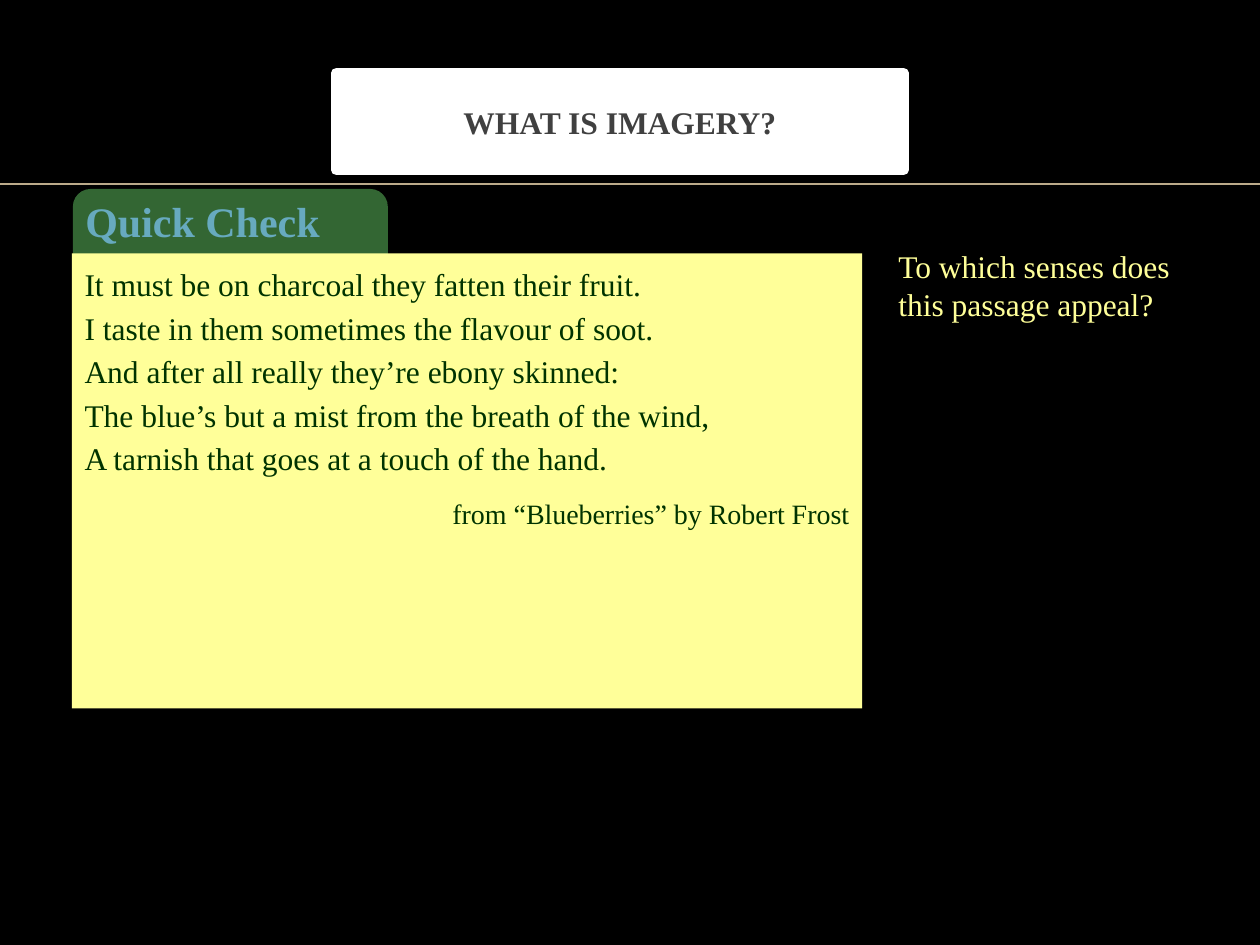
import dataclasses

import lxml.etree
import pptx
import pptx.dml.color
import pptx.enum.shapes
import pptx.enum.text
import pptx.oxml.ns
import pptx.util

Cm = pptx.util.Cm
Pt = pptx.util.Pt
ALIGN = pptx.enum.text.PP_ALIGN
SHAPE = pptx.enum.shapes.MSO_SHAPE


@dataclasses.dataclass(frozen=True)
class Theme:
    font: str = "Times New Roman"
    background: str = "000000"
    rule: str = "BBAA8A"
    tab: str = "336633"
    tab_text: str = "67AABF"
    panel: str = "FFFF99"
    panel_text: str = "003300"
    title_fill: str = "FFFFFF"
    title_text: str = "404040"
    heading: int = 24
    text: int = 18
    credit: int = 16


def rgb(value):
    return pptx.dml.color.RGBColor.from_string(value)


def add_child(parent, tag):
    lxml.etree.SubElement(parent, pptx.oxml.ns.qn(tag))


class SlideBuilder:
    def __init__(self, prs, theme):
        self.theme = theme
        self.s = prs.slides.add_slide(prs.slide_layouts[1])
        self.fill(self.s.background, theme.background)

    def fill(self, target, color):
        target.fill.solid()
        target.fill.fore_color.rgb = rgb(color)

    def paragraph(self, p, text, size, color, bold=False, space=0):
        p.text = text
        p.space_before = Pt(space)
        for r in p.runs:
            r.font.name = self.theme.font
            r.font.size = Pt(size)
            r.font.bold = bold
            r.font.color.rgb = rgb(color)

    def placeholder(self, sp, box, color):
        sp.left, sp.top, sp.width, sp.height = map(Cm, box)
        self.fill(sp, color)
        sp.text_frame.auto_size = pptx.enum.text.MSO_AUTO_SIZE.NONE
        sp._element.getparent().append(sp._element)
        return sp.text_frame

    def title(self, text, box):
        sp = self.s.shapes.title
        tf = self.placeholder(sp, box, self.theme.title_fill)
        sp.line.color.rgb = rgb(self.theme.title_fill)
        sp.line.width = Pt(6)
        tf.vertical_anchor = pptx.enum.text.MSO_ANCHOR.MIDDLE
        p = tf.paragraphs[0]
        self.paragraph(p, text, self.theme.text, self.theme.title_text, True, 4)
        p.alignment = ALIGN.CENTER

    def passage(self, lines, credit, box):
        theme = self.theme
        tf = self.placeholder(self.s.placeholders[1], box, theme.panel)
        tf.text = "\n".join([*lines, credit])
        for p in tf.paragraphs:
            self.paragraph(p, p.text, theme.text, theme.panel_text)
            p.line_spacing = 1.15
            pPr = p._p.get_or_add_pPr()
            pPr.set("marL", str(Cm(0.97)))
            pPr.set("indent", str(-Cm(0.97)))
            add_child(pPr, "a:buNone")
        self.paragraph(p, credit, theme.credit, theme.panel_text,
                       space=theme.credit / 2)
        p.alignment = ALIGN.RIGHT

    def text(self, text, box, size, color, bold=False):
        tf = self.s.shapes.add_textbox(*map(Cm, box)).text_frame
        tf.word_wrap = True
        self.paragraph(tf.paragraphs[0], text, size, color, bold, size / 2)

    def tab(self, box):
        sp = self.s.shapes.add_shape(SHAPE.ROUNDED_RECTANGLE, *map(Cm, box))
        sp.shadow.inherit = False
        self.fill(sp, self.theme.tab)
        sp.line.fill.background()

    def rule(self, y, width):
        line = self.s.shapes.add_connector(
            pptx.enum.shapes.MSO_CONNECTOR.STRAIGHT, 0, Cm(y), Cm(width), Cm(y))
        line.line.color.rgb = rgb(self.theme.rule)
        line.line.width = Pt(1)
        add_child(line._element.spPr, "a:effectLst")


def main():
    prs = pptx.Presentation()
    prs.slide_width, prs.slide_height = Cm(25.4), Cm(19.05)
    theme = Theme()
    slide = SlideBuilder(prs, theme)
    slide.rule(3.71, 25.4)
    slide.text("To which senses does this passage appeal?",
               (17.86, 4.85, 6.07, 3.63), theme.text, theme.panel)
    slide.tab((1.47, 3.81, 6.35, 2.13))
    slide.text("Quick Check", (1.47, 3.81, 6.45, 1.27),
               theme.heading, theme.tab_text, True)
    slide.passage(
        [
            "It must be on charcoal they fatten their fruit.",
            "I taste in them sometimes the flavour of soot.",
            "And after all really they’re ebony skinned:",
            "The blue’s but a mist from the breath of the wind,",
            "A tarnish that goes at a touch of the hand.",
        ],
        "from “Blueberries” by Robert Frost",
        (1.45, 5.11, 15.93, 9.17),
    )
    slide.title("WHAT IS IMAGERY?", (6.78, 1.47, 11.43, 1.96))
    prs.save("out.pptx")


if __name__ == "__main__":
    main()
